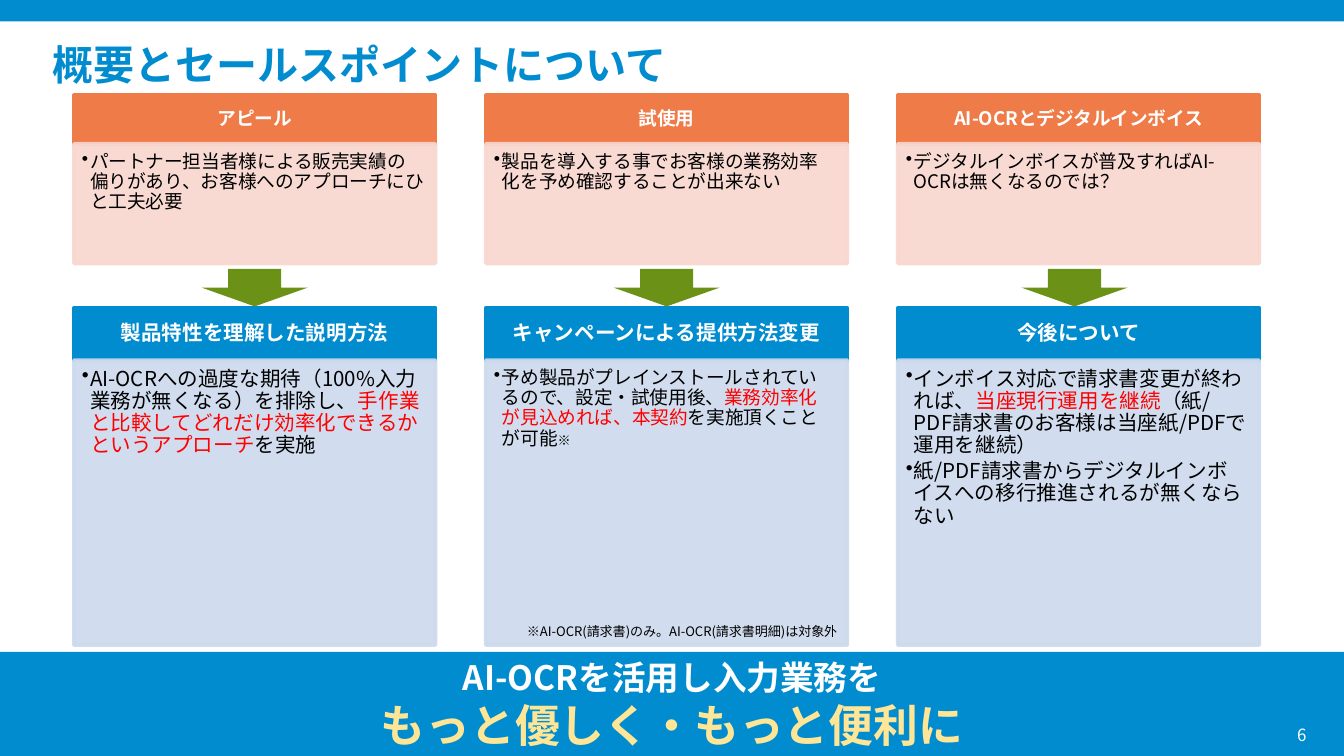
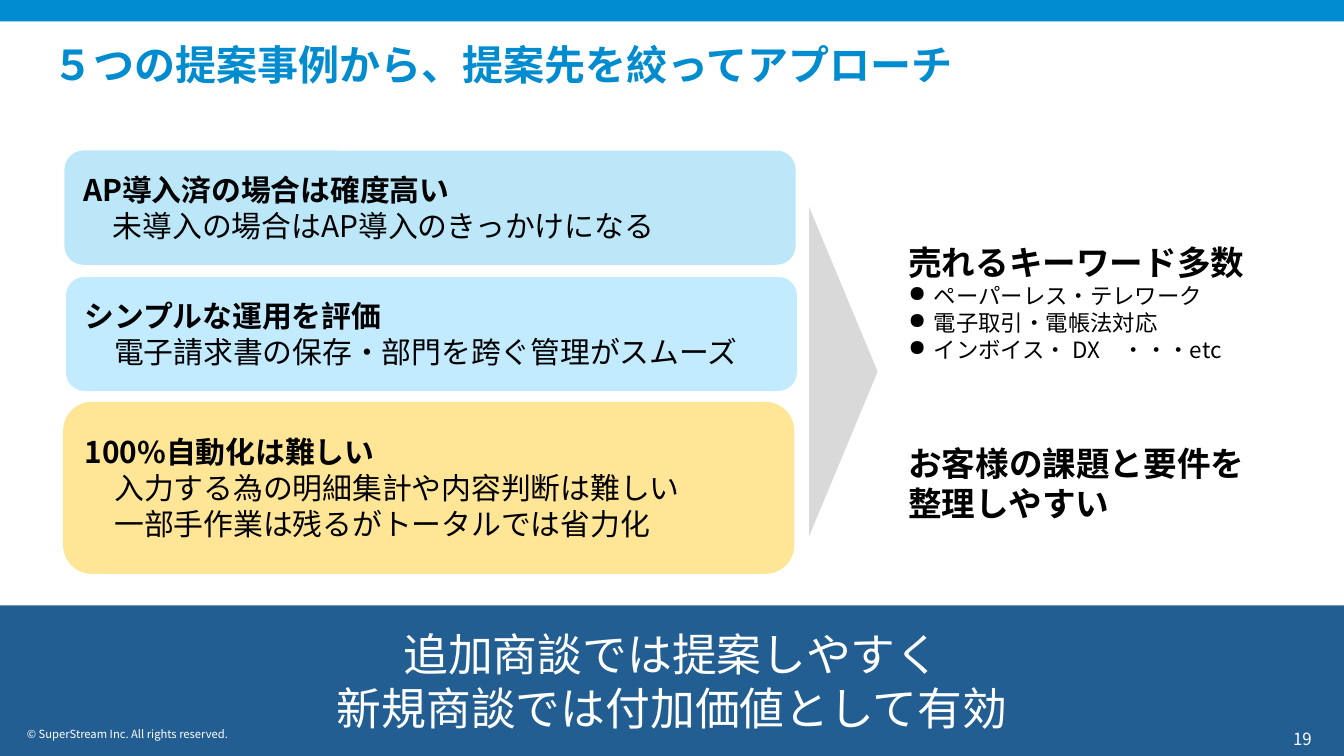
import dataclasses

import lxml.etree
import pptx
import pptx.dml.color
import pptx.enum.shapes
import pptx.enum.text
import pptx.oxml.ns
import pptx.util

SHAPES = pptx.enum.shapes.MSO_SHAPE
ALIGN = pptx.enum.text.PP_ALIGN
ANCHOR = pptx.enum.text.MSO_ANCHOR

FONT = "Noto Sans CJK JP"
BLUE, ORANGE, GREEN, NAVY = "008CCF", "EE7B48", "6B9217", "225E92"
PINK, PALE_BLUE, YELLOW, GREY = "F8D7CF", "CCDAED", "FFE697", "D9D9D9"
WHITE, BLACK, RED = "FFFFFF", "000000", "FF0000"

CELL = pptx.util.Inches(0.1)  # the slide is a grid of 100 columns
COLUMNS, ROWS = 100, 56.25
LINE_HEIGHT = 1.2
TIGHT = 0.9


@dataclasses.dataclass
class Box:
    """An area of the slide in grid cells."""
    left: float
    top: float
    width: float
    height: float

    def area(self, left, top, width, height):
        return Box(self.left + left, self.top + top, width, height)

    def lengths(self):
        return [int(n * CELL) for n in dataclasses.astuple(self)]


@dataclasses.dataclass
class Run:
    text: str
    size: float
    color: str = BLACK
    bold: bool = False


@dataclasses.dataclass
class Para:
    runs: list
    align: int = ALIGN.LEFT
    spacing: float = 1.0
    before: float = 0
    after: float = 0
    bullet: str = ""
    margin: float = 0  # inches; a bullet hangs by the same amount


SLIDE = Box(0, 0, COLUMNS, ROWS)


def rgb(hex_color):
    return pptx.dml.color.RGBColor.from_string(hex_color)


def add_child(parent, tag, **attributes):
    child = lxml.etree.SubElement(parent, pptx.oxml.ns.qn(tag))
    for name, value in attributes.items():
        child.set(name, value)
    return child


def format_paragraph(paragraph, para):
    paragraph.alignment = para.align
    size = max(run.size for run in para.runs)
    paragraph.line_spacing = pptx.util.Pt(size * LINE_HEIGHT * para.spacing)
    paragraph.space_before = pptx.util.Pt(para.before)
    paragraph.space_after = pptx.util.Pt(para.after)
    properties = paragraph._p.get_or_add_pPr()
    margin = pptx.util.Inches(para.margin)
    properties.set("marL", str(margin))
    properties.set("indent", str(-margin if para.bullet else 0))
    if para.bullet:
        add_child(properties, "a:buChar", char=para.bullet)
    else:
        add_child(properties, "a:buNone")
    for wording in para.runs:
        run = paragraph.add_run()
        run.text = wording.text
        run.font.size = pptx.util.Pt(wording.size)
        run.font.bold = wording.bold
        run.font.color.rgb = rgb(wording.color)
        run.font.name = FONT
        add_child(run._r.get_or_add_rPr(), "a:ea", typeface=FONT)


def write(shape, paras, anchor=ANCHOR.TOP, insets=(0.1, 0.05, 0.1, 0.05)):
    """Fill a shape with paragraphs; insets are left, top, right, bottom in inches."""
    frame = shape.text_frame
    frame.word_wrap = True
    frame.auto_size = pptx.enum.text.MSO_AUTO_SIZE.NONE
    frame.vertical_anchor = anchor
    (frame.margin_left, frame.margin_top,
     frame.margin_right, frame.margin_bottom) = map(pptx.util.Inches, insets)
    for index, para in enumerate(paras):
        paragraph = frame.add_paragraph() if index else frame.paragraphs[0]
        format_paragraph(paragraph, para)


def add_panel(slide, box, color, kind=SHAPES.RECTANGLE, outlined=False, opacity=100):
    panel = slide.shapes.add_shape(kind, *box.lengths())
    panel.shadow.inherit = False
    panel.fill.solid()
    panel.fill.fore_color.rgb = rgb(color)
    if outlined:
        panel.line.color.rgb = rgb(color)
        panel.line.width = pptx.util.Pt(2)
    else:
        panel.line.fill.background()
    if opacity < 100:
        for paint in panel._element.spPr.iter(pptx.oxml.ns.qn("a:srgbClr")):
            add_child(paint, "a:alpha", val=str(opacity * 1000))
    return panel


def add_label(slide, box, paras, **layout):
    write(slide.shapes.add_textbox(*box.lengths()), paras, **layout)


def add_titled_slide(deck, heading):
    slide = deck.slides.add_slide(deck.slide_layouts[5])
    add_panel(slide, SLIDE.area(0, 0, COLUMNS, 1.6), BLUE)
    title = slide.shapes.title
    title.left, title.top, title.width, title.height = SLIDE.area(3.9, 2.9, 77.6, 6.4).lengths()
    write(title, [Para([Run(heading, 22, BLUE, True)])], insets=(0, 0, 0, 0))
    return slide


def add_footer_text(slide, box, text, size, align):
    add_label(slide, box, [Para([Run(text, size, WHITE)], align)],
              anchor=ANCHOR.BOTTOM, insets=(0, 0, 0, 0))


def add_closing_band(slide, height, color, lines):
    band = add_panel(slide, SLIDE.area(0, ROWS - height, COLUMNS, height), color)
    write(band, [Para([line], ALIGN.CENTER) for line in lines], ANCHOR.MIDDLE)


def add_card(slide, box, header_height, colors, header, points):
    """A header bar over a bulleted body; colors are header and body."""
    bar = add_panel(slide, box.area(0, 0, box.width, header_height), colors[0], outlined=True)
    write(bar, [Para([header], ALIGN.CENTER, TIGHT)], ANCHOR.MIDDLE)
    body = add_panel(slide, box.area(0, header_height, box.width, box.height - header_height),
                     colors[1], outlined=True, opacity=90)
    write(body, [Para(runs, spacing=TIGHT, after=2, bullet="•", margin=0.06)
                 for runs in points], insets=(0.06, 0.06, 0.09, 0.1))


def add_issue_column(slide, box, issue, arrow_left, answer):
    """An issue card, an arrow down and the answer card."""
    issue_title, issue_text = issue
    add_card(slide, box.area(0, 0, box.width, 12.5), 3.6, (ORANGE, PINK),
             Run(issue_title, 10, WHITE, True), [[Run(issue_text, 10)]])
    answer_title, points = answer
    add_card(slide, box.area(0, 15.8, box.width, 25.1), 3.9, (BLUE, PALE_BLUE),
             Run(answer_title, 11, WHITE, True), points)
    add_panel(slide, box.area(arrow_left, 12.9, 7.9, 2.8), GREEN, SHAPES.DOWN_ARROW)


def build_overview(deck):
    slide = add_titled_slide(deck, "概要とセールスポイントについて")
    add_closing_band(slide, 7.75, BLUE, [
        Run("AI-OCRを活用し入力業務を", 18, WHITE, True),
        Run("もっと優しく・もっと便利に", 24, YELLOW, True)])
    columns = [
        (("アピール",
          "パートナー担当者様による販売実績の偏りがあり、お客様へのアプローチにひと工夫必要"),
         9.5,
         ("製品特性を理解した説明方法", [[
             Run("AI-OCRへの過度な期待（100%入力業務が無くなる）を排除し、", 11),
             Run("手作業と比較してどれだけ効率化できるかというアプローチ", 11, RED),
             Run("を実施", 11)]])),
        (("試使用", "製品を導入する事でお客様の業務効率化を予め確認することが出来ない"),
         9.5,
         ("キャンペーンによる提供方法変更", [[
             Run("予め製品がプレインストールされているので、設定・試使用後、", 10),
             Run("業務効率化が見込めれば、本契約", 10, RED),
             Run("を実施頂くことが可能", 10),
             Run("※", 7)]])),
        (("AI-OCRとデジタルインボイス",
          "デジタルインボイスが普及すればAI-OCRは無くなるのでは？"),
         9.2,
         ("今後について", [
             [Run("インボイス対応で請求書変更が終われば、", 11),
              Run("当座現行運用を継続", 11, RED),
              Run("（紙/PDF請求書のお客様は当座紙/PDFで運用を継続）", 11)],
             [Run("紙/PDF請求書からデジタルインボイスへの移行推進されるが無くならない", 11)]])),
    ]
    for index, column in enumerate(columns):
        add_issue_column(slide, SLIDE.area(5.5 + index * 30.65, 7.1, 26.9, 40.9), *column)
    add_footer_text(slide, SLIDE.area(93.3, 53.9, 3.9, 1.5), "6", 9, ALIGN.RIGHT)
    add_label(slide, SLIDE.area(35, 46.2, 31.5, 1.5),
              [Para([Run("※AI-OCR(請求書)のみ。AI-OCR(請求書明細)は対象外", 7)], ALIGN.CENTER)],
              anchor=ANCHOR.MIDDLE)


def add_case(slide, box, color, headline, details):
    case = add_panel(slide, box, color, SHAPES.ROUNDED_RECTANGLE)
    write(case, [Para([Run(headline, 16, bold=True)])]
          + [Para([Run(detail, 16)], margin=0.22) for detail in details], ANCHOR.MIDDLE)


def add_keywords(slide, box):
    keywords = ["ペーパーレス・テレワーク", "電子取引・電帳法対応", "インボイス・ DX　・・・etc"]
    add_label(slide, box, [
        Para([Run("売れるキーワード多数", 18, bold=True)]),
        *[Para([Run(keyword, 12)], bullet="●", margin=0.19) for keyword in keywords],
        Para([Run("お客様の課題と要件を整理しやすい", 18, bold=True)], before=43)])


def build_approach(deck):
    slide = add_titled_slide(deck, "５つの提案事例から、提案先を絞ってアプローチ")
    cases = [
        (4.8, 11.2, 8.5, "BBE7F9", "AP導入済の場合は確度高い",
         ["未導入の場合はAP導入のきっかけになる"]),
        (4.9, 20.6, 8.5, "C2EBFF", "シンプルな運用を評価",
         ["電子請求書の保存・部門を跨ぐ管理がスムーズ"]),
        (4.7, 29.9, 12.8, YELLOW, "100%自動化は難しい",
         ["入力する為の明細集計や内容判断は難しい", "一部手作業は残るがトータルでは省力化"]),
    ]
    for left, top, height, *content in cases:
        add_case(slide, SLIDE.area(left, top, 54.4, height), *content)
    pointer = add_panel(slide, SLIDE.area(50.5, 25.1, 24.5, 5.1), GREY,
                        SHAPES.ISOSCELES_TRIANGLE)
    pointer.rotation = 90
    add_keywords(slide, SLIDE.area(66.6, 17.5, 28, 22.2))
    add_closing_band(slide, 11.2, NAVY, [
        Run("追加商談では提案しやすく", 24, WHITE),
        Run("新規商談では付加価値として有効", 24, WHITE)])
    add_footer_text(slide, SLIDE.area(93.7, 54.2, 3.9, 1.5), "19", 9, ALIGN.RIGHT)
    add_footer_text(slide, SLIDE.area(2, 53.6, 23.6, 1.5),
                    "© SuperStream Inc. All rights reserved.", 6, ALIGN.LEFT)


def main():
    deck = pptx.Presentation()
    deck.slide_width = int(COLUMNS * CELL)
    deck.slide_height = int(ROWS * CELL)
    build_overview(deck)
    build_approach(deck)
    deck.save("out.pptx")


if __name__ == "__main__":
    main()
